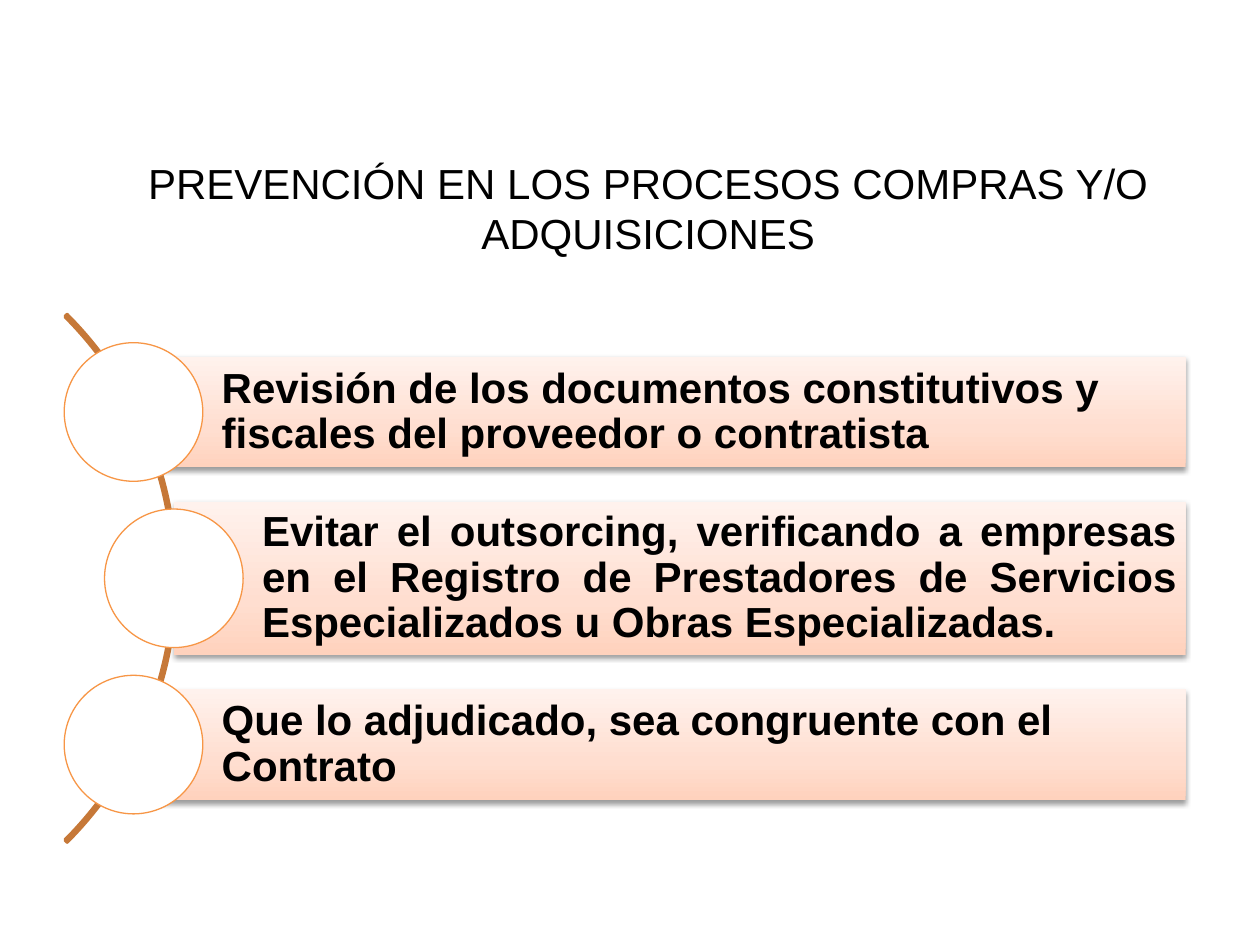
from copy import deepcopy

from lxml import etree
from pptx import Presentation
from pptx.dml.color import RGBColor
from pptx.enum.shapes import MSO_SHAPE
from pptx.enum.text import MSO_ANCHOR, MSO_AUTO_SIZE, PP_ALIGN
from pptx.oxml.ns import qn
from pptx.util import Inches, Pt

RECTANGLE, OVAL, BLOCK_ARC = MSO_SHAPE.RECTANGLE, MSO_SHAPE.OVAL, MSO_SHAPE.BLOCK_ARC
LEFT, CENTER, JUSTIFY = PP_ALIGN.LEFT, PP_ALIGN.CENTER, PP_ALIGN.JUSTIFY
TOP, MIDDLE = MSO_ANCHOR.TOP, MSO_ANCHOR.MIDDLE

BLACK = RGBColor(0x00, 0x00, 0x00)
WHITE = RGBColor(0xFF, 0xFF, 0xFF)
ORANGE = RGBColor(0xF7, 0x96, 0x46)
BROWN = RGBColor(0xC6, 0x78, 0x38)
PEACH_STOPS = [
    (0, RGBColor(0xFF, 0xD2, 0xBD)),
    (0.35, RGBColor(0xFF, 0xDE, 0xD0)),
    (1, RGBColor(0xFF, 0xF2, 0xED)),
]

FONT = "Arial"
TITLE = "PREVENCIÓN EN LOS PROCESOS COMPRAS Y/O ADQUISICIONES"

# Rows of the list: centres are spaced evenly around the middle row.
MIDDLE_ROW = 4.59
ROW_PITCH = 1.32
BAR_RIGHT = 9.41
CIRCLE = 1.1
ARC_CENTER, ARC_SIZE = -1.56, 5.92

# Circle centre, bar height, alignment, text
ITEMS = [
    (1.06, 0.88, LEFT,
     "Revisión de los documentos constitutivos y fiscales del proveedor o contratista"),
    (1.38, 1.21, JUSTIFY,
     "Evitar el outsorcing, verificando a empresas en el Registro de Prestadores "
     "de Servicios Especializados u Obras Especializadas."),
    (1.06, 0.88, LEFT, "Que lo adjudicado, sea congruente con el Contrato"),
]


def add_plain_shape(slide, kind, left, top, width, height):
    shape = slide.shapes.add_shape(
        kind, Inches(left), Inches(top), Inches(width), Inches(height))
    shape.shadow.inherit = False
    return shape


def set_line(shape, color, width):
    shape.line.color.rgb = color
    shape.line.width = Pt(width)


def fill_peach(shape):
    shape.fill.gradient()
    shape.fill.gradient_angle = 90
    stop_list = shape._element.spPr.find(".//" + qn("a:gsLst"))
    stop_list.append(deepcopy(stop_list[0]))
    for stop, (position, color) in zip(shape.fill.gradient_stops, PEACH_STOPS):
        stop.position = position
        stop.color.rgb = color


def add_drop_shadow(shape):
    effects = shape._element.spPr.find(qn("a:effectLst"))
    shadow = etree.SubElement(
        effects, qn("a:outerShdw"), blurRad=str(Pt(3.1)), dist=str(Pt(1.6)),
        dir="5400000", rotWithShape="0")
    color = etree.SubElement(shadow, qn("a:srgbClr"), val=str(BLACK))
    etree.SubElement(color, qn("a:alpha"), val="38000")


def write_text(shape, text, align, anchor, insets, bold=False):
    """Write one paragraph; insets are left, top, right and bottom in inches."""
    frame = shape.text_frame
    frame.word_wrap = True
    frame.vertical_anchor = anchor
    (frame.margin_left, frame.margin_top,
     frame.margin_right, frame.margin_bottom) = map(Inches, insets)
    para = frame.paragraphs[0]
    para.alignment = align
    span = para.add_run()
    span.text = text
    span.font.name = FONT
    span.font.size = Pt(24)
    span.font.bold = bold
    span.font.color.rgb = BLACK
    return para


def add_title(slide):
    title = slide.shapes.title
    title.left, title.top = Inches(0.81), Inches(1.2)
    title.width, title.height = Inches(8.67), Inches(0.91)
    write_text(title, TITLE, CENTER, TOP, (0.1, 0.05, 0.1, 0.05))
    title.text_frame.auto_size = MSO_AUTO_SIZE.SHAPE_TO_FIT_TEXT


def add_arc(slide):
    arc = add_plain_shape(slide, BLOCK_ARC, ARC_CENTER - ARC_SIZE / 2,
                          MIDDLE_ROW - ARC_SIZE / 2, ARC_SIZE, ARC_SIZE)
    for index, value in enumerate((189, 27, 0.004)):
        arc.adjustments[index] = value
    arc.fill.background()
    set_line(arc, BROWN, 2)


def add_bar(slide, left, middle, height, align, text):
    bar = add_plain_shape(slide, RECTANGLE, left, middle - height / 2,
                          BAR_RIGHT - left, height)
    fill_peach(bar)
    bar.line.fill.background()
    add_drop_shadow(bar)
    para = write_text(bar, text, align, MIDDLE, (0.7, 0.07, 0.07, 0.07), bold=True)
    para.line_spacing = 0.9


def add_circle(slide, center, middle):
    circle = add_plain_shape(slide, OVAL, center - CIRCLE / 2,
                             middle - CIRCLE / 2, CIRCLE, CIRCLE)
    circle.fill.solid()
    circle.fill.fore_color.rgb = WHITE
    set_line(circle, ORANGE, 0.75)


def main():
    deck = Presentation()
    deck.slide_width, deck.slide_height = Inches(10), Inches(7.5)
    slide = deck.slides.add_slide(deck.slide_layouts[5])
    add_title(slide)
    add_arc(slide)
    for row, (center, height, align, text) in enumerate(ITEMS):
        middle = MIDDLE_ROW + (row - 1) * ROW_PITCH
        add_bar(slide, center, middle, height, align, text)
        add_circle(slide, center, middle)
    deck.save("out.pptx")


if __name__ == "__main__":
    main()
